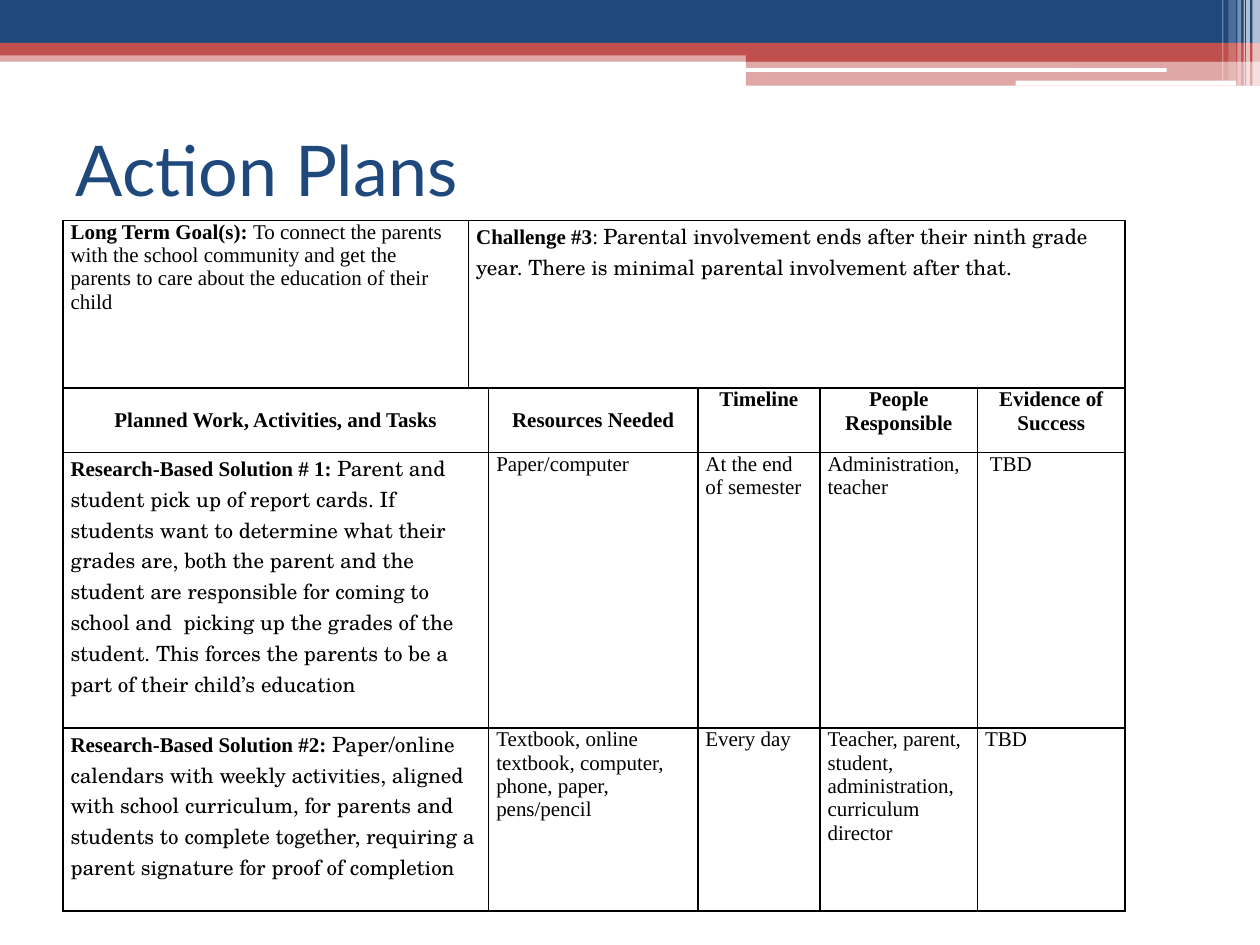
from pptx import Presentation
from pptx.dml.color import RGBColor
from pptx.enum import shapes, text
from pptx.oxml import parse_xml
from pptx.oxml.ns import nsdecls, qn
from pptx.util import Inches, Pt

NAVY, RED, WHITE, BLACK = "1F497D", "C0504D", "FFFFFF", "000000"
SERIF, BOOK = "Times New Roman", "TeX Gyre Schola"

BANDS = [
    (0, 0.4, 10, 0.09, RED, 50),
    (0, 0, 10, 0.34, NAVY, 100),
    (0, 0.34, 10, 0.1, RED, 100),
    (5.92, 0.39, 4.08, 0.1, RED, 100),
    (5.92, 0.48, 4.08, 0.2, RED, 50),
]
SLOTS = [(5.91, 0.54, 3.35, 0.03), (8.06, 0.64, 1.75, 0.04)]
STRIPES = [
    (9.94, 0.06, 0.68, 65),
    (9.89, 0.03, 0.68, 65),
    (9.87, 0.01, 0.68, 60),
    (9.82, 0.03, 0.68, 40),
    (9.75, 0.06, 0.64, 20),
    (9.7, 0.01, 0.64, 30),
]

COLS = [3.22, 0.14, 1.66, 0.97, 1.25, 1.17]
ROWS = [1.33, 0.51, 2.19, 1.45]
HEADS = [
    (0, "Planned Work, Activities, and Tasks"),
    (2, "Resources Needed"),
    (3, "Timeline"),
    (4, "People Responsible"),
    (5, "Evidence of Success"),
]
PLANS = [
    ("Research-Based Solution # 1: ",
     "Parent and student pick up of report cards. If students want to determine "
     "what their grades are, both the parent and the student are responsible for "
     "coming to school and  picking up the grades of the student. This forces the "
     "parents to be a part of their child’s education",
     ["Paper/computer", "At the end of semester", "Administration, teacher", " TBD"]),
    ("Research-Based Solution #2: ",
     "Paper/online calendars with weekly activities, aligned with school "
     "curriculum, for parents and students to complete together, requiring a "
     "parent signature for proof of completion",
     ["Textbook, online textbook, computer, phone, paper, pens/pencil", "Every day",
      "Teacher, parent, student, administration, curriculum director", "TBD"]),
]


def paint(fill, color, alpha=100):
    fill.solid()
    fill.fore_color.rgb = RGBColor.from_string(color)
    if alpha < 100:
        tone = fill._xPr.find(qn("a:solidFill"))[0]
        tone.append(parse_xml(f'<a:alpha {nsdecls("a")} val="{alpha * 1000}"/>'))


def add_bar(slide, x, y, w, h, color, alpha=100, kind=shapes.MSO_SHAPE.RECTANGLE):
    bar = slide.shapes.add_shape(kind, Inches(x), Inches(y), Inches(w), Inches(h))
    bar.shadow.inherit = False
    bar.line.fill.background()
    paint(bar.fill, color, alpha)


def add_run(para, words, face, size, color, bold=False):
    run = para.add_run()
    run.text = words
    font = run.font
    font.name, font.size, font.bold = face, Pt(size), bold
    font.color.rgb = RGBColor.from_string(color)


def add_title(slide, words):
    title = slide.shapes.title
    title.left, title.top = Inches(0.5), Inches(0.75)
    title.width, title.height = Inches(9), Inches(1.17)
    frame = title.text_frame
    frame.vertical_anchor = text.MSO_ANCHOR.MIDDLE
    para = frame.paragraphs[0]
    para.alignment = text.PP_ALIGN.LEFT
    add_run(para, words, "Lato", 40, NAVY)


def add_edges(cell):
    props = cell._tc.get_or_add_tcPr()
    for i, side in enumerate("LRTB"):
        props.insert(i, parse_xml(
            f'<a:ln{side} {nsdecls("a")} w="12700"><a:solidFill>'
            f'<a:srgbClr val="{BLACK}"/></a:solidFill></a:ln{side}>'))


def fill_cell(cell, runs, gap=3, center=False, middle=False):
    cell.margin_left = cell.margin_right = Inches(0.06)
    cell.margin_top = cell.margin_bottom = 0
    cell.vertical_anchor = text.MSO_ANCHOR.MIDDLE if middle else text.MSO_ANCHOR.TOP
    para = cell.text_frame.paragraphs[0]
    para.alignment = text.PP_ALIGN.CENTER if center else text.PP_ALIGN.LEFT
    para.space_before = para.space_after = Pt(gap)
    for words, face, bold in runs:
        add_run(para, words, face, 12, BLACK, bold)


def add_grid(slide):
    grid = slide.shapes.add_table(
        len(ROWS), len(COLS), Inches(0.5), Inches(1.75),
        Inches(sum(COLS)), Inches(sum(ROWS))).table
    grid.first_row = grid.horz_banding = False
    for col, wide in zip(grid.columns, COLS):
        col.width = Inches(wide)
    for row, high in zip(grid.rows, ROWS):
        row.height = Inches(high)
    grid.cell(0, 1).merge(grid.cell(0, 5))
    for r in range(1, len(ROWS)):
        grid.cell(r, 0).merge(grid.cell(r, 1))
    for cell in grid.iter_cells():
        cell.fill.background()
        if not cell.is_spanned:
            add_edges(cell)
    return grid


def fill_grid(grid):
    fill_cell(grid.cell(0, 0), [
        ("Long Term Goal(s): ", SERIF, True),
        ("To connect the parents with the school community and get the parents "
         "to care about the education of their child", SERIF, False)], gap=6)
    fill_cell(grid.cell(0, 1), [
        ("Challenge #3", SERIF, True),
        (": ", SERIF, False),
        ("Parental involvement ends after their ninth grade year. There is "
         "minimal parental involvement after that.", BOOK, False)], gap=6)
    for c, words in HEADS:
        fill_cell(grid.cell(1, c), [(words, SERIF, True)], center=True, middle=c < 3)
    for r, (label, task, notes) in enumerate(PLANS, 2):
        fill_cell(grid.cell(r, 0), [(label, SERIF, True), (task, BOOK, False)])
        for c, note in enumerate(notes, 2):
            fill_cell(grid.cell(r, c), [(note, SERIF, False)])


def main():
    deck = Presentation()
    deck.slide_width, deck.slide_height = Inches(10), Inches(7.5)
    slide = deck.slides.add_slide(deck.slide_layouts[5])
    for band in BANDS:
        add_bar(slide, *band)
    for slot in SLOTS:
        add_bar(slide, *slot, WHITE, kind=shapes.MSO_SHAPE.ROUNDED_RECTANGLE)
    for x, w, h, alpha in STRIPES:
        add_bar(slide, x, 0, w, h, WHITE, alpha)
    add_title(slide, "Action Plans")
    fill_grid(add_grid(slide))
    deck.save("out.pptx")


if __name__ == "__main__":
    main()
